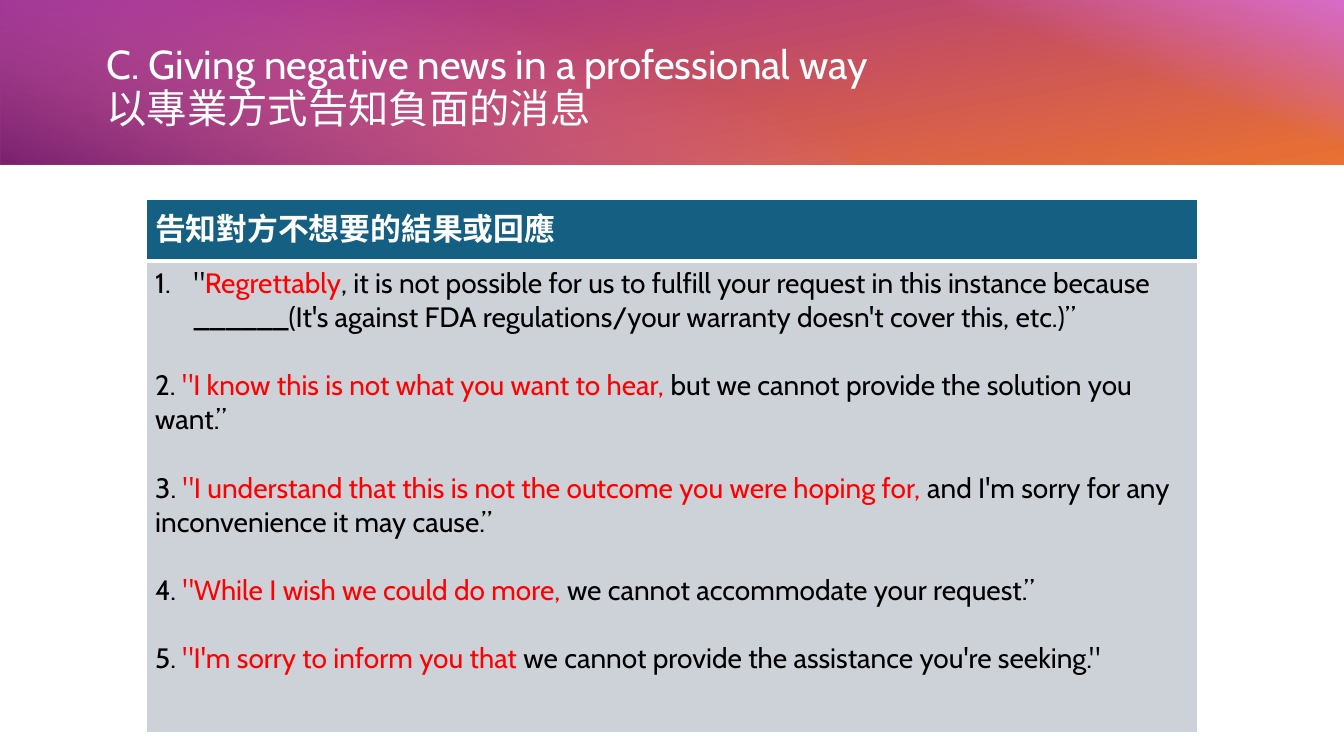
from dataclasses import dataclass
from typing import Any

from lxml import etree
from pptx import Presentation
from pptx import util as u
from pptx.dml.color import RGBColor
from pptx.enum import shapes, text
from pptx.oxml import ns

FONT = "Cabin"
COLORS = {
    "white": "FFFFFF", "black": "000000", "red": "FF0000",
    "teal": "156082", "grey": "CCD2D8", "magenta": "A02B93",
    "orange": "E97132", "pink": "D86ECC", "plum": "78206E",
}


@dataclass(frozen=True)
class Stop:
    position: int
    color: str
    opacity: int = 100


@dataclass(frozen=True)
class Band:
    left: float
    top: float
    width: float
    height: float
    rotation: int
    angle: int
    stops: tuple[Stop, ...]


@dataclass(frozen=True)
class Phrase:
    lead: str
    highlight: str
    rest: str
    numbered: bool = False


BANDS = (
    Band(5.84, -5.87, 1.66, 13.34, 270, 170, (Stop(0, "magenta"), Stop(100, "orange"))),
    Band(9.75, -1.97, 1.65, 5.54, 270, 20, (Stop(59, "pink", 0), Stop(100, "pink"))),
    Band(3.39, -3.42, 1.66, 8.44, 90, 20, (Stop(29, "pink", 0), Stop(100, "plum"))),
)
TITLE = "C. Giving negative news in a professional way \v以專業方式告知負面的消息"
HEADING = "告知對方不想要的結果或回應"
PHRASES = (
    Phrase('"', "Regrettably",
           ", it is not possible for us to fulfill your request in this instance because "
           "______(It's against FDA regulations/your warranty doesn't cover this, etc.)”", True),
    Phrase("2. ", '"I know this is not what you want to hear, ',
           "but we cannot provide the solution you want.”"),
    Phrase("3. ", '"I understand that this is not the outcome you were hoping for, ',
           "and I'm sorry for any inconvenience it may cause.”"),
    Phrase("4. ", '"While I wish we could do more, ',
           "we cannot accommodate your request.”"),
    Phrase("5. ", '"I\'m sorry to inform you that ',
           "we cannot provide the assistance you're seeking.\""),
)


def add_element(parent: Any, tag: str, **attributes: Any) -> Any:
    values = {name: str(value) for name, value in attributes.items()}
    return etree.SubElement(parent, ns.qn(tag), values)


def set_attributes(target: Any, values: dict[str, Any]) -> None:
    for name, value in values.items():
        setattr(target, name, value)


def add_run(paragraph: Any, words: str, size: float, color: str, bold: bool = False) -> None:
    run = paragraph.add_run()
    run.text = words
    set_attributes(run.font, {"name": FONT, "size": u.Pt(size), "bold": bold})
    run.font.color.rgb = RGBColor.from_string(COLORS[color])


def add_band(group: Any, band: Band) -> None:
    box = (u.Inches(n) for n in (band.left, band.top, band.width, band.height))
    shape = group.shapes.add_shape(shapes.MSO_SHAPE.RECTANGLE, *box)
    shape.rotation = band.rotation
    shape.shadow.inherit = False
    shape.line.fill.background()
    properties = shape.element.spPr
    gradient = add_element(properties, "a:gradFill", rotWithShape=1)
    stop_list = add_element(gradient, "a:gsLst")
    for stop in band.stops:
        mark = add_element(stop_list, "a:gs", pos=stop.position * 1000)
        color = add_element(mark, "a:srgbClr", val=COLORS[stop.color])
        if stop.opacity < 100:
            add_element(color, "a:alpha", val=stop.opacity * 1000)
    add_element(gradient, "a:lin", ang=band.angle * 60000, scaled=0)
    properties.find(ns.qn("a:prstGeom")).addnext(gradient)


def format_cell(cell: Any, fill: str, borders: dict[str, int]) -> None:
    set_attributes(cell, {
        "margin_left": u.Inches(0.09), "margin_right": u.Inches(0.09),
        "margin_top": u.Inches(0.05), "margin_bottom": u.Inches(0.05),
        "vertical_anchor": text.MSO_ANCHOR.TOP,
    })
    properties = cell._tc.get_or_add_tcPr()
    for side, width in borders.items():
        line = add_element(properties, f"a:ln{side}", w=u.Pt(width))
        color = add_element(line, "a:solidFill")
        add_element(color, "a:srgbClr", val=COLORS["white"])
    cell.fill.solid()
    cell.fill.fore_color.rgb = RGBColor.from_string(COLORS[fill])


def add_phrase(paragraph: Any, phrase: Phrase) -> None:
    for words, color in ((phrase.lead, "black"), (phrase.highlight, "red"),
                         (phrase.rest, "black")):
        add_run(paragraph, words, 20, color)
    if phrase.numbered:
        properties = paragraph._p.get_or_add_pPr()
        properties.set("marL", str(u.Inches(0.38)))
        properties.set("indent", str(-u.Inches(0.38)))
        add_element(properties, "a:buFont", typeface="+mj-lt")
        add_element(properties, "a:buAutoNum", type="arabicPeriod")


def main() -> None:
    presentation = Presentation()
    set_attributes(presentation, {"slide_width": u.Inches(13.33),
                                  "slide_height": u.Inches(7.5)})
    slide = presentation.slides.add_slide(presentation.slide_layouts[6])

    # Gradient header
    header = slide.shapes.add_group_shape()
    for band in BANDS:
        add_band(header, band)

    # Title
    title = slide.shapes.add_textbox(*(u.Inches(n) for n in (0.96, 0.33, 11.46, 1.1)))
    set_attributes(title.text_frame, {"word_wrap": True,
                                      "vertical_anchor": text.MSO_ANCHOR.MIDDLE})
    paragraph = title.text_frame.paragraphs[0]
    paragraph.line_spacing = 0.9
    for index, line in enumerate(TITLE.split("\v")):
        if index:
            paragraph.add_line_break()
        add_run(paragraph, line, 28.8, "white")

    # Phrase table
    frame = slide.shapes.add_table(2, 1, *(u.Inches(n) for n in (1.45, 1.98, 10.43, 5.29)))
    table = frame.table
    for row, height in zip(table.rows, (0.61, 4.68)):
        row.height = u.Inches(height)
    heading, body = table.cell(0, 0), table.cell(1, 0)
    format_cell(heading, "teal", {"L": 1, "R": 1, "T": 1, "B": 3})
    format_cell(body, "grey", {"L": 1, "R": 1, "T": 3, "B": 1})
    add_run(heading.text_frame.paragraphs[0], HEADING, 22, "white", True)
    for index, phrase in enumerate(PHRASES):
        paragraphs = body.text_frame
        paragraph = paragraphs.add_paragraph() if index else paragraphs.paragraphs[0]
        if index:
            paragraph.space_before = u.Pt(24.4)
        add_phrase(paragraph, phrase)

    presentation.save("out.pptx")


if __name__ == "__main__":
    main()
